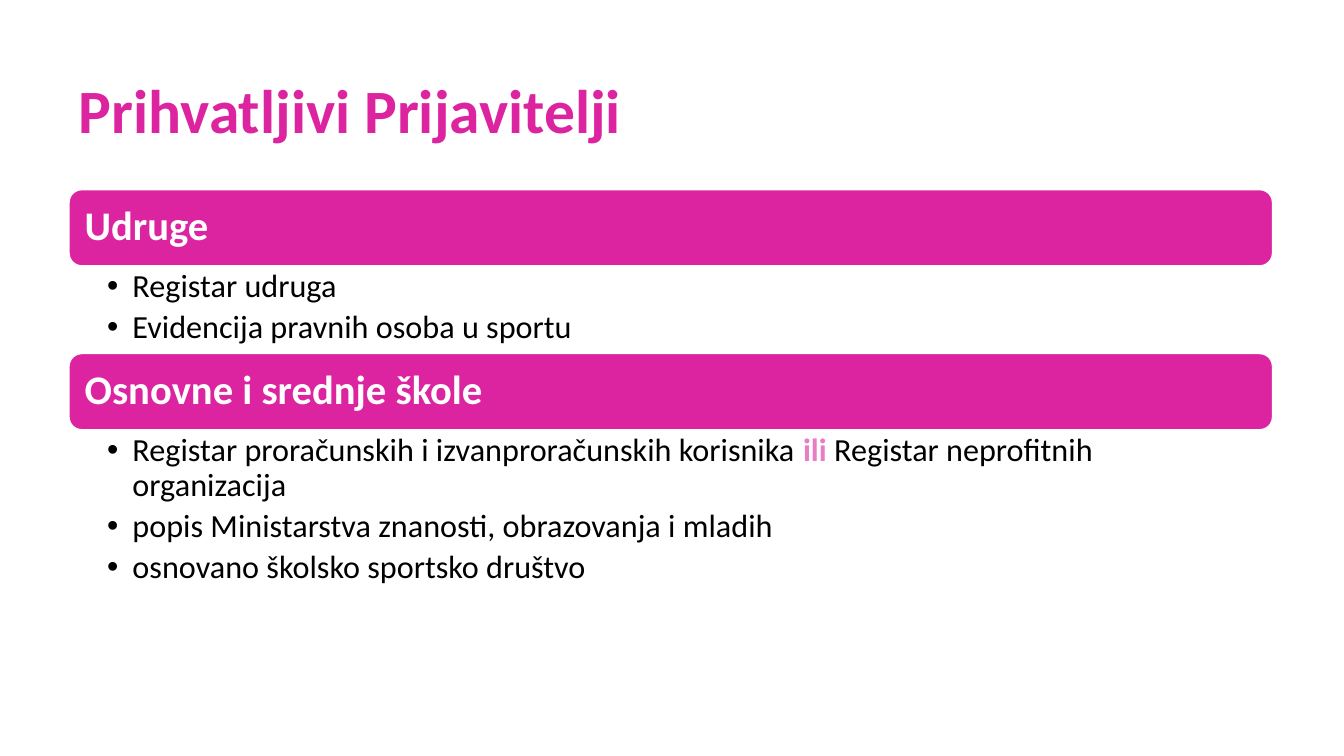
from pptx import Presentation
from pptx.dml.color import RGBColor
from pptx.enum.shapes import MSO_SHAPE
from pptx.enum.text import MSO_ANCHOR, PP_ALIGN
from pptx.util import Cm, Pt
from lxml.etree import SubElement
from pptx.oxml.ns import qn

HUES = {"pink": "DC24A0", "pale": "EA7CC6", "white": "FFFFFF", "black": "000000"}
FORMS = {
    "title": {"size": Pt(44), "bold": True},
    "head": {"size": Pt(29), "bold": True},
    "item": {"size": Pt(23), "bold": False},
    "stress": {"size": Pt(23), "bold": True},
}
BAR = {"margin_left": Cm(0.3), "margin_right": Cm(0.3), "margin_top": Cm(0.3),
       "margin_bottom": Cm(0.3), "vertical_anchor": MSO_ANCHOR.MIDDLE, "word_wrap": True}
BODY = {"margin_left": Cm(0.96), "margin_right": Cm(0.58), "margin_top": Cm(0.1),
        "margin_bottom": Cm(0.1), "vertical_anchor": MSO_ANCHOR.TOP, "word_wrap": True}
TITLE = {"vertical_anchor": MSO_ANCHOR.MIDDLE, "word_wrap": True}


def apply(thing, values):
    for name, value in values.items():
        setattr(thing, name, value)


def write(para, text, form, hue):
    apply(para, {"line_spacing": 0.9, "alignment": PP_ALIGN.LEFT})
    run = para.add_run()
    run.text = text
    apply(run.font, {"name": "Calibri", **FORMS[form]})
    run.font.color.rgb = RGBColor.from_string(HUES[hue])


# Content: heading, body height in cm, items made of text runs
PARTS = [
    ("Udruge", 2.21, [
        [("Registar udruga", "item", "black")],
        [("Evidencija pravnih osoba u sportu", "item", "black")],
    ]),
    ("Osnovne i srednje škole", 4.17, [
        [("Registar proračunskih i izvanproračunskih korisnika ", "item", "black"),
         ("ili ", "stress", "pale"),
         ("Registar neprofitnih organizacija", "item", "black")],
        [("popis Ministarstva znanosti, obrazovanja i mladih", "item", "black")],
        [("osnovano školsko sportsko društvo", "item", "black")],
    ]),
]

deck = Presentation()
apply(deck, {"slide_width": Cm(33.87), "slide_height": Cm(19.05)})
slide = deck.slides.add_slide(deck.slide_layouts[6])
left, width, tall = 1.74, 30.33, 1.92

# Title
frame = slide.shapes.add_textbox(Cm(left), Cm(1.01), Cm(26.85), Cm(3.68)).text_frame
apply(frame, TITLE)
write(frame.paragraphs[0], "Prihvatljivi Prijavitelji", "title", "pink")

# Stacked bars, each with its list below
top = 4.78
for head, depth, items in PARTS:
    bar = slide.shapes.add_shape(MSO_SHAPE.ROUNDED_RECTANGLE,
                                 Cm(left), Cm(top), Cm(width), Cm(tall))
    bar.shadow.inherit = False
    bar.fill.solid()
    bar.fill.fore_color.rgb = RGBColor.from_string(HUES["pink"])
    bar.line.color.rgb = RGBColor.from_string(HUES["white"])
    bar.line.width = Pt(1)
    apply(bar.text_frame, BAR)
    write(bar.text_frame.paragraphs[0], head, "head", "white")
    top += tall

    frame = slide.shapes.add_textbox(Cm(left), Cm(top), Cm(width), Cm(depth)).text_frame
    apply(frame, BODY)
    for index, runs in enumerate(items):
        para = frame.add_paragraph() if index else frame.paragraphs[0]
        para.space_after = Pt(4.6)
        props = para._p.get_or_add_pPr()
        props.set("marL", str(Cm(0.64)))
        props.set("indent", str(-Cm(0.64)))
        SubElement(props, qn("a:buFont")).set("typeface", "Arial")
        SubElement(props, qn("a:buChar")).set("char", "•")
        for text, form, hue in runs:
            write(para, text, form, hue)
    top += depth

deck.save("out.pptx")
